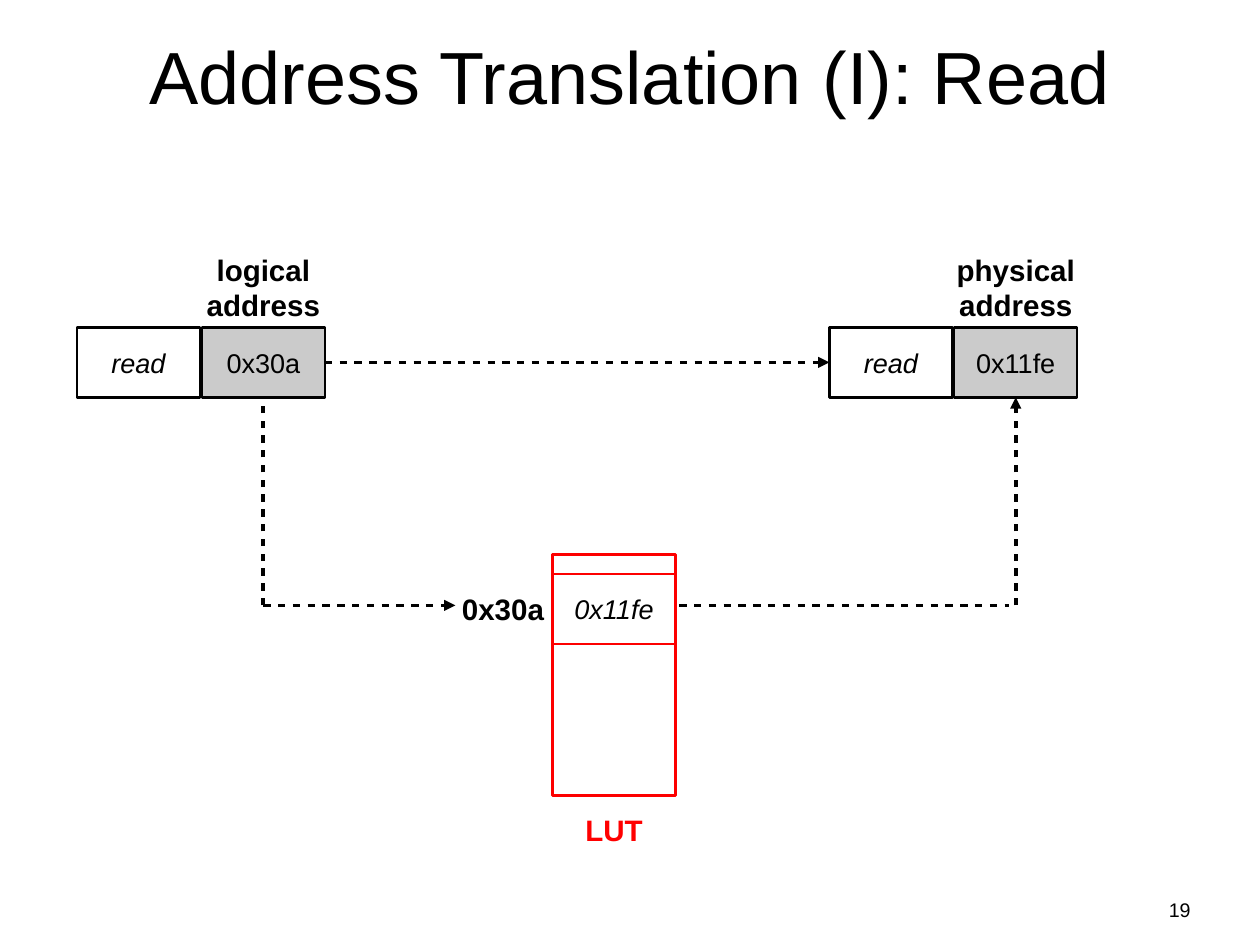
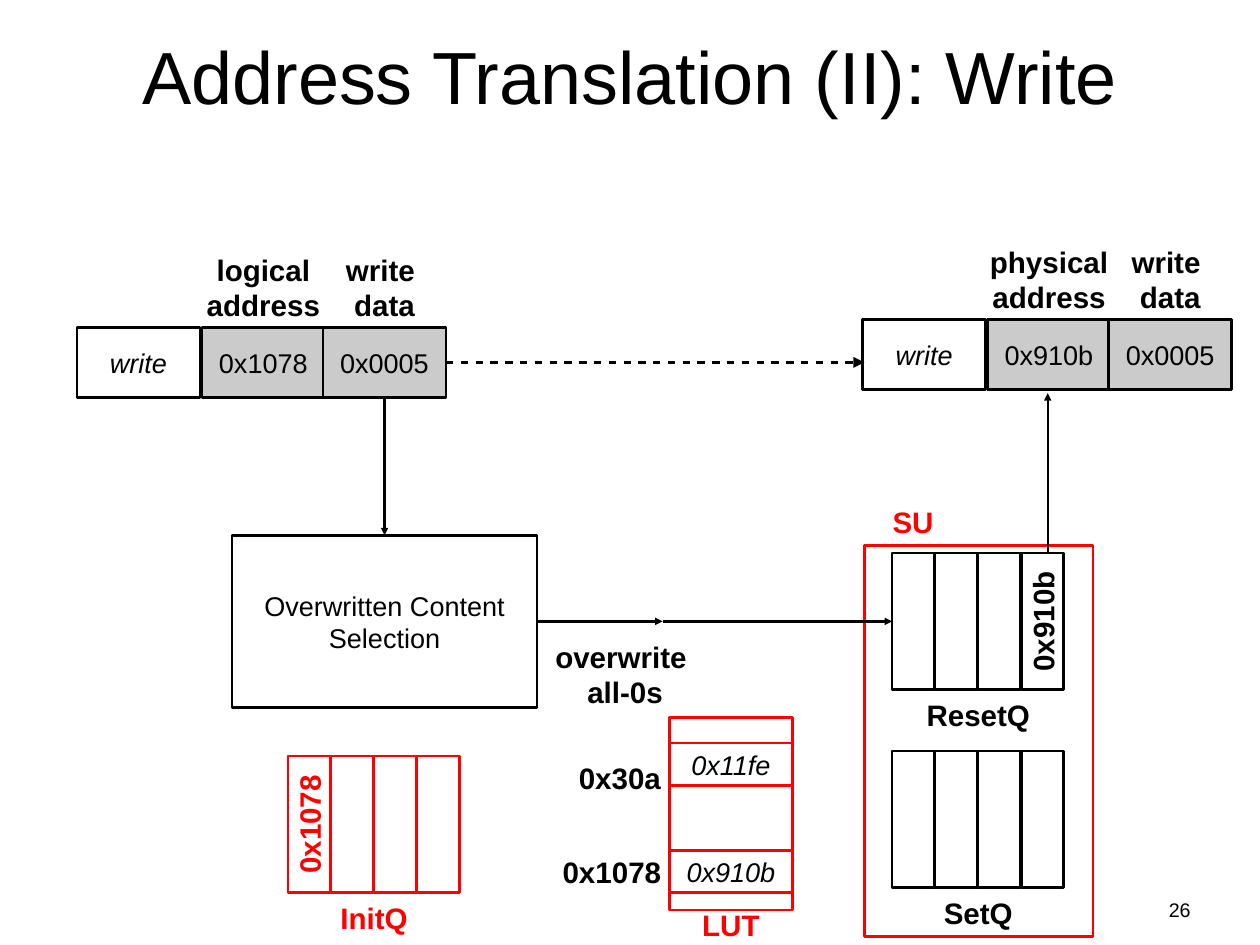
from lxml import etree
from pptx import Presentation
from pptx.dml.color import RGBColor
from pptx.enum.shapes import MSO_CONNECTOR, MSO_SHAPE
from pptx.enum.text import MSO_ANCHOR, PP_ALIGN
from pptx.oxml.ns import qn
from pptx.util import Pt

RECTANGLE = MSO_SHAPE.RECTANGLE
STRAIGHT = MSO_CONNECTOR.STRAIGHT
MIDDLE, TOP = MSO_ANCHOR.MIDDLE, MSO_ANCHOR.TOP
CENTER = PP_ALIGN.CENTER

# Shared style
FONT = "Arial"
BLACK, RED, LUT_RED, GRAY = "000000", "FF0000", "FD0000", "CBCBCB"
TITLE_SIZE, LABEL_SIZE, CELL_SIZE, NUMBER_SIZE = 60, 24, 22, 16
INSET = 4.5
CELL_W, CELL_H = 100, 57
CELL_OFFSETS = (0, 101.5, 200)
HEADING_W, HEADING_H = 142, 65.5
LABEL_H = 36
SLOT_W, SLOT_H, SLOT_PITCH, SLOTS = 34.5, 111, 35, 4
ABOVE, LEFT, BELOW, RIGHT = range(4)

# Request rows: left, top, (text, heading) per cell
READ_LOGICAL = (62.5, 266, [("read", ""), ("0x30a", "logical address")])
READ_PHYSICAL = (674, 266, [("read", ""), ("0x11fe", "physical address")])
WRITE_LOGICAL = (62.5, 266, [("write", ""), ("0x1078", "logical address"),
                             ("0x0005", "write \ndata")])
WRITE_PHYSICAL = (701, 259.5, [("write", ""), ("0x910b", "physical address"),
                               ("0x0005", "write \ndata")])

# Lookup tables: left, top, height, caption centre,
# (address, label width, label centre, content, entry top, entry height)
READ_LUT = (449, 450.5, 196, 674.5,
            [("0x30a", 75.5, 495, "0x11fe", 466.5, 57)])
WRITE_LUT = (544, 583, 156.5, 751.5,
             [("0x30a", 75.5, 632, "0x11fe", 604, 34.5),
              ("0x1078", 88.5, 708.5, "0x910b", 691, 34.5)])

# Queues: name, name width, left, top, colour, stored address, its slot
QUEUES = [("ResetQ", 93.5, 725, 449.5, BLACK, "0x910b", 3),
          ("SetQ", 65.5, 725, 610.5, BLACK, "", None),
          ("InitQ", 63.5, 234, 614.5, RED, "0x1078", 0)]


def color(value):
    return RGBColor.from_string(value)


def write(shape, text, size, ink=BLACK, bold=False, italic=False,
          anchor=MIDDLE, wrap=True):
    frame = shape.text_frame
    frame.word_wrap = wrap
    frame.vertical_anchor = anchor
    frame.margin_left = frame.margin_right = Pt(INSET if wrap else 0)
    frame.margin_top = frame.margin_bottom = Pt(INSET)
    frame.text = text
    for para in frame.paragraphs:
        para.alignment = CENTER
        font = para.font
        font.name, font.size = FONT, Pt(size)
        font.bold, font.italic = bold, italic
        font.color.rgb = color(ink)


def add_text(page, left, top, width, height, text, size, **style):
    box = page.shapes.add_textbox(Pt(left), Pt(top), Pt(width), Pt(height))
    write(box, text, size, **style)
    return box


def add_label(page, text, center_x, center_y, width, ink=BLACK, height=LABEL_H):
    return add_text(page, center_x - width / 2, center_y - height / 2, width,
                    height, text, LABEL_SIZE, ink=ink, bold=True, wrap=False)


def add_box(page, left, top, width, height, text="", line=BLACK, fill=None,
            italic=False):
    box = page.shapes.add_shape(RECTANGLE, Pt(left), Pt(top), Pt(width), Pt(height))
    box.shadow.inherit = False
    if fill:
        box.fill.solid()
        box.fill.fore_color.rgb = color(fill)
    else:
        box.fill.background()
    box.line.color.rgb = color(line)
    box.line.width = Pt(2)
    if text:
        write(box, text, CELL_SIZE, italic=italic)
    return box


def add_line(page, start, end, width=2, arrow=True, dashed=False):
    """Each end is an (x, y) point or a (box, side) pair to join."""
    def is_joint(place):
        return not isinstance(place[0], (int, float))

    points = [(0, 0) if is_joint(place) else place for place in (start, end)]
    line = page.shapes.add_connector(
        STRAIGHT, *(Pt(value) for point in points for value in point))
    if is_joint(start):
        line.begin_connect(*start)
    if is_joint(end):
        line.end_connect(*end)
    line.line.color.rgb = color(BLACK)
    line.line.width = Pt(width)
    outline = line.line._get_or_add_ln()
    if dashed:
        pattern = etree.SubElement(outline, qn("a:custDash"))
        etree.SubElement(pattern, qn("a:ds"), d="200000", sp="200000")
    if arrow:
        etree.SubElement(outline, qn("a:tailEnd"), type="triangle")
    etree.SubElement(line._element.spPr, qn("a:effectLst"))


def add_page(deck, title, number):
    page = deck.slides.add_slide(deck.slide_layouts[6])
    add_text(page, 0, -1.5, 1023.5, 125, title, TITLE_SIZE)
    add_text(page, 945.5, 725, 26.5, 25, number, NUMBER_SIZE, anchor=TOP, wrap=False)
    return page


def add_request(page, left, top, cells):
    boxes = []
    for offset, (text, heading) in zip(CELL_OFFSETS, cells):
        x = left + offset
        boxes.append(add_box(page, x, top, CELL_W, CELL_H, text,
                             fill=GRAY if heading else None, italic=not heading))
        if heading:
            add_text(page, x + (CELL_W - HEADING_W) / 2, top - HEADING_H,
                     HEADING_W, HEADING_H, heading, LABEL_SIZE, bold=True)
    return boxes


def add_lut(page, left, top, height, caption_y, entries):
    for address, width, label_y, content, entry_top, entry_height in entries:
        add_box(page, left, entry_top, CELL_W, entry_height, content,
                line=LUT_RED, italic=True)
        add_label(page, address, left - 2.5 - width / 2, label_y, width)
    add_box(page, left, top, CELL_W, height, line=LUT_RED)
    add_label(page, "LUT", left + CELL_W / 2, caption_y, 55.5, RED)


def add_queue(page, name, width, left, top, ink, address, used_slot):
    slots = [add_box(page, left + i * SLOT_PITCH, top, SLOT_W, SLOT_H, line=ink)
             for i in range(SLOTS)]
    if address:
        center_x = left + used_slot * SLOT_PITCH + SLOT_W / 2
        add_label(page, address, center_x, top + SLOT_H / 2, 89, ink).rotation = 270
    add_label(page, name, left + SLOTS * SLOT_PITCH / 2, top + SLOT_H + 20, width, ink)
    return slots


def build_read(deck):
    page = add_page(deck, "Address Translation (I): Read", "19")
    _, logical = add_request(page, *READ_LOGICAL)
    command, physical = add_request(page, *READ_PHYSICAL)
    add_lut(page, *READ_LUT)
    # Path through the lookup table, then the direct path
    dashes = {"width": 3, "dashed": True}
    add_line(page, (214, 492), (370, 492), **dashes)
    add_line(page, (214, 492), (logical, BELOW), arrow=False, **dashes)
    add_line(page, (552, 492), (820, 492), arrow=False, **dashes)
    add_line(page, (825.5, 492), (physical, BELOW), **dashes)
    add_line(page, (logical, RIGHT), (command, LEFT), **dashes)


def build_write(deck):
    page = add_page(deck, "Address Translation (II): Write", "26")
    data = add_request(page, *WRITE_LOGICAL)[-1]
    add_request(page, *WRITE_PHYSICAL)
    selection = add_box(page, 188.5, 435, 248, 140, "Overwritten Content Selection")
    add_label(page, "overwrite \nall-0s", 508, 548, 129.5, height=HEADING_H)
    # Storage units
    add_box(page, 702.5, 443.5, 186, 317.5, line=RED)
    add_label(page, "SU", 742, 424, 42.5, RED)
    reset_slots, _, _ = [add_queue(page, *queue) for queue in QUEUES]
    add_lut(page, *WRITE_LUT)
    # Data flow
    add_line(page, (data, BELOW), (selection, ABOVE))
    add_line(page, (selection, RIGHT), (538.5, 505))
    add_line(page, (538.5, 505), (reset_slots[0], LEFT))
    add_line(page, (851.5, 448.5), (851.5, 319.5))
    add_line(page, (data, RIGHT), (702.5, 294.5), width=3, dashed=True)


def main():
    deck = Presentation()
    deck.slide_width, deck.slide_height = Pt(1024), Pt(768)
    build_read(deck)
    build_write(deck)
    deck.save("out.pptx")


if __name__ == "__main__":
    main()
